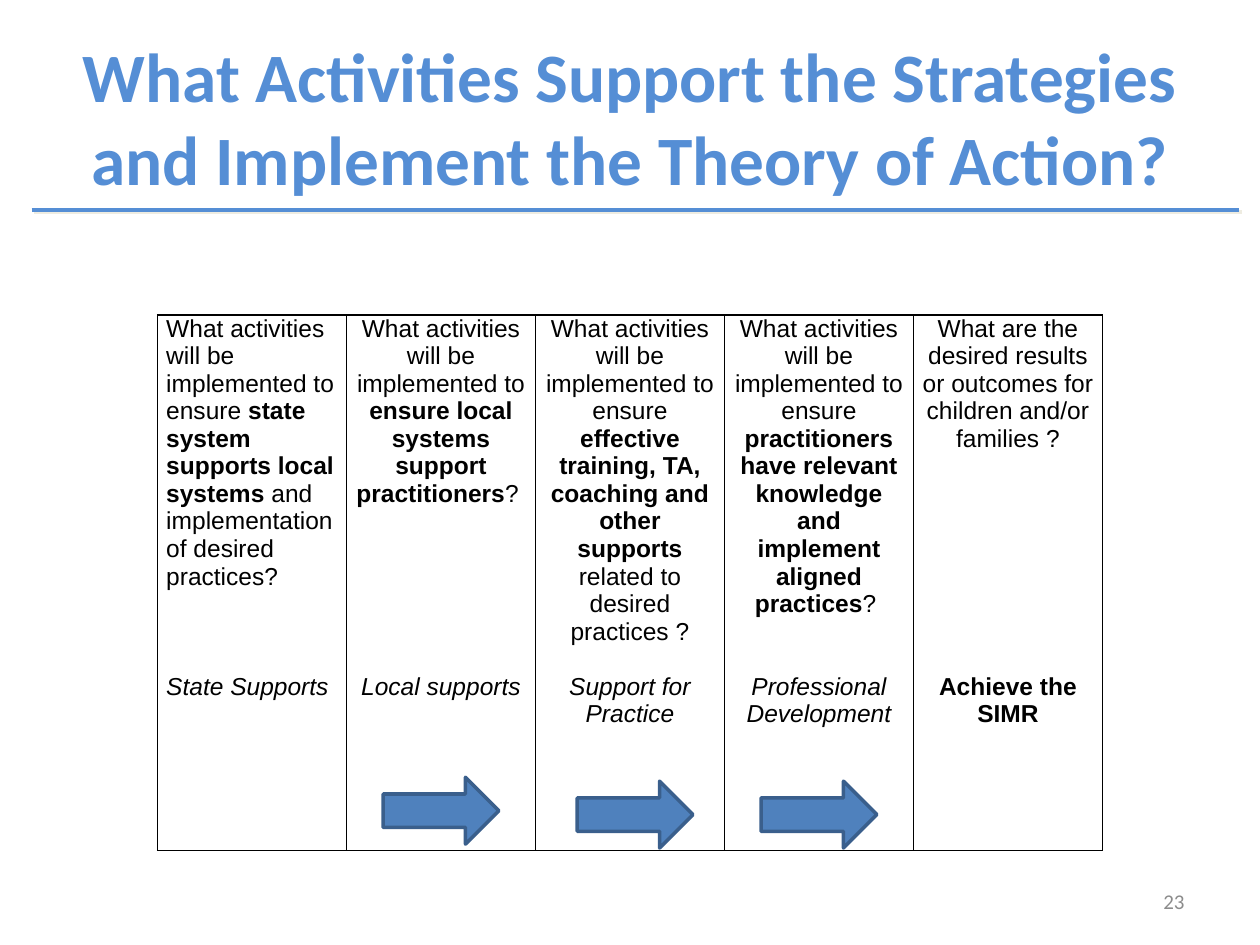
from pptx import Presentation
from pptx.util import Pt
from pptx.dml.color import RGBColor
from pptx.enum.shapes import MSO_CONNECTOR, MSO_SHAPE
from pptx.enum.text import MSO_ANCHOR, PP_ALIGN
from pptx.oxml import parse_xml
from pptx.oxml.ns import nsdecls

# Content: (alignment, question runs, blank lines before label, label, label style)
TITLE = "What Activities Support the Strategies and Implement the Theory of Action?"
PAGE = "23"
ASK = "What activities will be implemented to "
COLS = [
    ("left", [(ASK + "ensure ", ""), ("state system supports local systems ", "b"),
              ("and implementation of desired practices?", "")],
     3, "State Supports", "i"),
    ("center", [(ASK, ""), ("ensure local systems support practitioners", "b"), ("? ", "")],
     6, "Local supports", "i"),
    ("center", [(ASK + "ensure ", ""),
                ("effective training, TA, coaching and other supports ", "b"),
                ("related to desired practices ?", "")],
     1, "Support for Practice", "i"),
    ("center", [(ASK + "ensure ", ""),
                ("practitioners have relevant knowledge and implement aligned practices", "b"),
                ("? ", "")],
     2, "Professional Development", "i"),
    ("center", [("What are the desired results or outcomes for children and/or families ?", "")],
     8, "Achieve the SIMR", "b"),
]
ARROWS = [(218.9, 444.2), (329.8, 446.4), (434.9, 446.4)]

THEME = {
    "head": "Calibri", "body": "Arial",
    "blue": "558ED5", "fill": "4F81BD", "edge": "3A5F8C",
    "ink": "000000", "grey": "8C8C8C", "shade": "EEECE1",
    "title": 39.6, "text": 14, "page": 12,
}
ALIGN = {"left": PP_ALIGN.LEFT, "center": PP_ALIGN.CENTER, "right": PP_ALIGN.RIGHT}
LINE = 15.75  # height of one line of table text


def tint(name):
    return RGBColor.from_string(THEME[name])


def add_run(para, text, size, font, color, style=""):
    run = para.add_run()
    run.text = text
    run.font.size = Pt(THEME[size])
    run.font.name = THEME[font]
    run.font.color.rgb = tint(color)
    run.font.bold = "b" in style
    run.font.italic = "i" in style


def add_text(slide, box, text, align, size, color, style=""):
    frame = slide.shapes.add_textbox(*map(Pt, box)).text_frame
    frame.word_wrap = True
    frame.vertical_anchor = MSO_ANCHOR.MIDDLE
    para = frame.paragraphs[0]
    para.alignment = ALIGN[align]
    add_run(para, text, size, "head", color, style)


def add_rule(slide):
    rule = slide.shapes.add_connector(
        MSO_CONNECTOR.STRAIGHT, Pt(18), Pt(120), Pt(708), Pt(120))
    rule.line.color.rgb = tint("blue")
    rule.line.width = Pt(2)
    rule._element.spPr.append(parse_xml(
        f'<a:effectLst {nsdecls("a")}><a:outerShdw dist="{Pt(2)}" dir="2400000">'
        f'<a:srgbClr val="{THEME["shade"]}"/></a:outerShdw></a:effectLst>'))


def add_edges(cell):
    props = cell._tc.get_or_add_tcPr()
    for side in "LRTB":
        props.append(parse_xml(
            f'<a:ln{side} {nsdecls("a")} w="{Pt(1)}"><a:solidFill>'
            f'<a:srgbClr val="{THEME["ink"]}"/></a:solidFill></a:ln{side}>'))


def fill_cell(cell, align, ask, gap, label, style):
    add_edges(cell)
    cell.fill.background()
    cell.margin_left = cell.margin_right = Pt(5)
    cell.margin_top = cell.margin_bottom = 0
    frame = cell.text_frame
    first, last = frame.paragraphs[0], frame.add_paragraph()
    first.alignment = last.alignment = ALIGN[align]
    for text, look in ask:
        add_run(first, text, "text", "body", "ink", look)
    last.space_before = Pt(gap * LINE)
    add_run(last, label, "text", "body", "ink", style)


def add_grid(slide):
    grid = slide.shapes.add_table(
        1, len(COLS), Pt(90), Pt(180), Pt(540), Pt(306)).table
    grid.first_row = grid.horz_banding = False
    for i, col in enumerate(COLS):
        fill_cell(grid.cell(0, i), *col)


def add_arrow(slide, left, top):
    arrow = slide.shapes.add_shape(
        MSO_SHAPE.RIGHT_ARROW, Pt(left), Pt(top), Pt(66.2), Pt(38.2))
    arrow.shadow.inherit = False
    arrow.fill.solid()
    arrow.fill.fore_color.rgb = tint("fill")
    arrow.line.color.rgb = tint("edge")
    arrow.line.width = Pt(2)


def main():
    deck = Presentation()
    deck.slide_width, deck.slide_height = Pt(720), Pt(540)
    slide = deck.slides.add_slide(deck.slide_layouts[6])
    add_rule(slide)
    add_grid(slide)
    for spot in ARROWS:
        add_arrow(slide, *spot)
    # Title and page number
    add_text(slide, (36, 21.6, 648, 90), TITLE, "center", "title", "blue", "b")
    add_text(slide, (516, 500.4, 168, 28.8), PAGE, "right", "page", "grey")
    deck.save("out.pptx")


if __name__ == "__main__":
    main()
